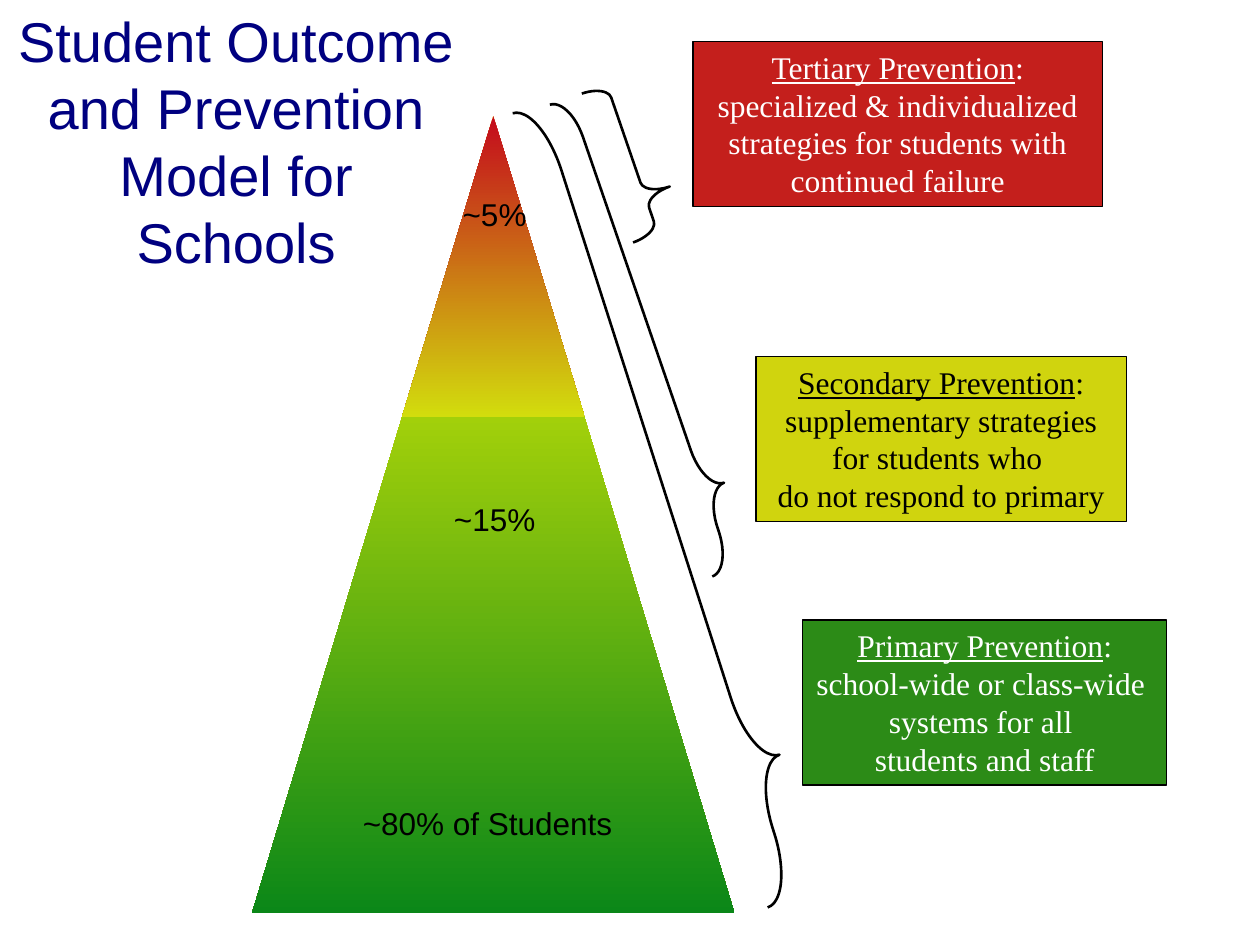
from pptx import Presentation
from pptx.dml.color import RGBColor
from pptx.enum.shapes import MSO_SHAPE
from pptx.enum.text import MSO_ANCHOR, MSO_AUTO_SIZE, PP_ALIGN
from pptx.util import Inches, Pt

TRIANGLE = MSO_SHAPE.ISOSCELES_TRIANGLE
RECTANGLE = MSO_SHAPE.RECTANGLE
RIGHT_BRACE = MSO_SHAPE.RIGHT_BRACE
TOP = MSO_ANCHOR.TOP
NO_AUTO_SIZE = MSO_AUTO_SIZE.NONE
CENTER = PP_ALIGN.CENTER

BLACK = RGBColor(0x00, 0x00, 0x00)
WHITE = RGBColor(0xFF, 0xFF, 0xFF)
NAVY = RGBColor(0x00, 0x00, 0x80)
RED = RGBColor(0xC4, 0x1F, 0x1C)
YELLOW = RGBColor(0xD0, 0xD4, 0x0E)
GREEN = RGBColor(0x2C, 0x8B, 0x17)
PYRAMID_COLORS = (RGBColor(0xFF, 0xFC, 0x02), RGBColor(0x0B, 0x87, 0x18))
TIP_COLORS = (RGBColor(0xC4, 0x0A, 0x1D), RGBColor(0xD2, 0xDD, 0x0D))

TITLE_FORMAT = {"name": "Arial", "size": Pt(32)}
LABEL_FORMAT = {"name": "Arial", "size": Pt(18)}
CALLOUT_FORMAT = {"name": "Times New Roman", "size": Pt(18)}

PYRAMID_BOX = (2, 0.92, 3.83, 6.33)
TIP_BOX = (3.19, 0.92, 1.45, 2.39)

LABELS = [
    ("~80% of Students", (2.58, 6.33, 2.58, 0.4)),
    ("~15% ", (3.5, 3.92, 0.92, 0.4)),
    ("~5% ", (3.5, 1.5, 0.92, 0.4)),
]

# heading, further paragraphs, box, fill, text colour, wrapped
CALLOUTS = [
    ("Tertiary Prevention",
     ["specialized & individualized",
      "strategies for students with continued failure"],
     (5.5, 0.33, 3.25, 1.31), RED, WHITE, True),
    ("Secondary Prevention",
     ["supplementary strategies",
      "for students who \ndo not respond to primary"],
     (6, 2.83, 2.94, 1.31), YELLOW, BLACK, True),
    ("Primary Prevention",
     ["school-wide or class-wide \nsystems for all \nstudents and staff"],
     (6.37, 4.92, 2.89, 1.31), GREEN, WHITE, False),
]

# box, rotation, curve size, point position
BRACES = [
    ((4.81, 0.64, 0.42, 1.25), 341, 0.25, 0.74),
    ((5, 0.67, 0.33, 3.96), 341, 0.99, 0.83),
    ((5.07, 0.67, 0.46, 6.62), 342.2, 1.19, 0.83),
]


def to_inches(box):
    return [Inches(length) for length in box]


def format_paragraph(para, font_format, color):
    para.alignment = CENTER
    for span in para.runs:
        for name, value in font_format.items():
            setattr(span.font, name, value)
        span.font.color.rgb = color


def add_title(page, box):
    title = page.shapes.title
    title.left, title.top, title.width, title.height = to_inches(box)
    frame = title.text_frame
    frame.text = "Student Outcome and Prevention Model for Schools"
    frame.auto_size = NO_AUTO_SIZE
    frame.vertical_anchor = TOP
    format_paragraph(frame.paragraphs[0], TITLE_FORMAT, NAVY)


def add_gradient_triangle(group, box, colors):
    triangle = group.shapes.add_shape(TRIANGLE, *to_inches(box))
    triangle.shadow.inherit = False
    triangle.line.fill.background()
    triangle.fill.gradient()
    triangle.fill.gradient_angle = 270
    for stop, position, color in zip(triangle.fill.gradient_stops, (0, 1), colors):
        stop.position = position
        stop.color.rgb = color


def add_pyramid(page, pyramid_box, tip_box):
    group = page.shapes.add_group_shape()
    add_gradient_triangle(group, pyramid_box, PYRAMID_COLORS)
    add_gradient_triangle(group, tip_box, TIP_COLORS)


def add_label(page, text, box):
    label = page.shapes.add_textbox(*to_inches(box))
    frame = label.text_frame
    frame.word_wrap = True
    frame.text = text
    format_paragraph(frame.paragraphs[0], LABEL_FORMAT, BLACK)


def add_callout(page, heading, paragraphs, box, fill, color, wrapped):
    callout = page.shapes.add_shape(RECTANGLE, *to_inches(box))
    callout.shadow.inherit = False
    callout.fill.solid()
    callout.fill.fore_color.rgb = fill
    callout.line.color.rgb = BLACK
    callout.line.width = Pt(0.75)
    frame = callout.text_frame
    frame.word_wrap = wrapped
    frame.vertical_anchor = TOP
    first = frame.paragraphs[0]
    for text, underlined in ((heading, True), (":", False)):
        span = first.add_run()
        span.text = text
        span.font.underline = underlined
    for text in paragraphs:
        frame.add_paragraph().text = text
    for para in frame.paragraphs:
        format_paragraph(para, CALLOUT_FORMAT, color)


def add_brace(page, box, rotation, curve, point):
    brace = page.shapes.add_shape(RIGHT_BRACE, *to_inches(box))
    brace.shadow.inherit = False
    brace.rotation = rotation
    brace.adjustments[0] = curve
    brace.adjustments[1] = point
    brace.fill.background()
    brace.line.color.rgb = BLACK
    brace.line.width = Pt(1.5)


def main():
    deck = Presentation()
    deck.slide_width, deck.slide_height = Inches(10), Inches(7.5)
    page = deck.slides.add_slide(deck.slide_layouts.get_by_name("Title Only"))
    add_title(page, (0, 0, 3.75, 2.23))
    add_pyramid(page, PYRAMID_BOX, TIP_BOX)
    for callout in CALLOUTS:
        add_callout(page, *callout)
    for label in LABELS:
        add_label(page, *label)
    for brace in BRACES:
        add_brace(page, *brace)
    deck.save("out.pptx")


if __name__ == "__main__":
    main()
